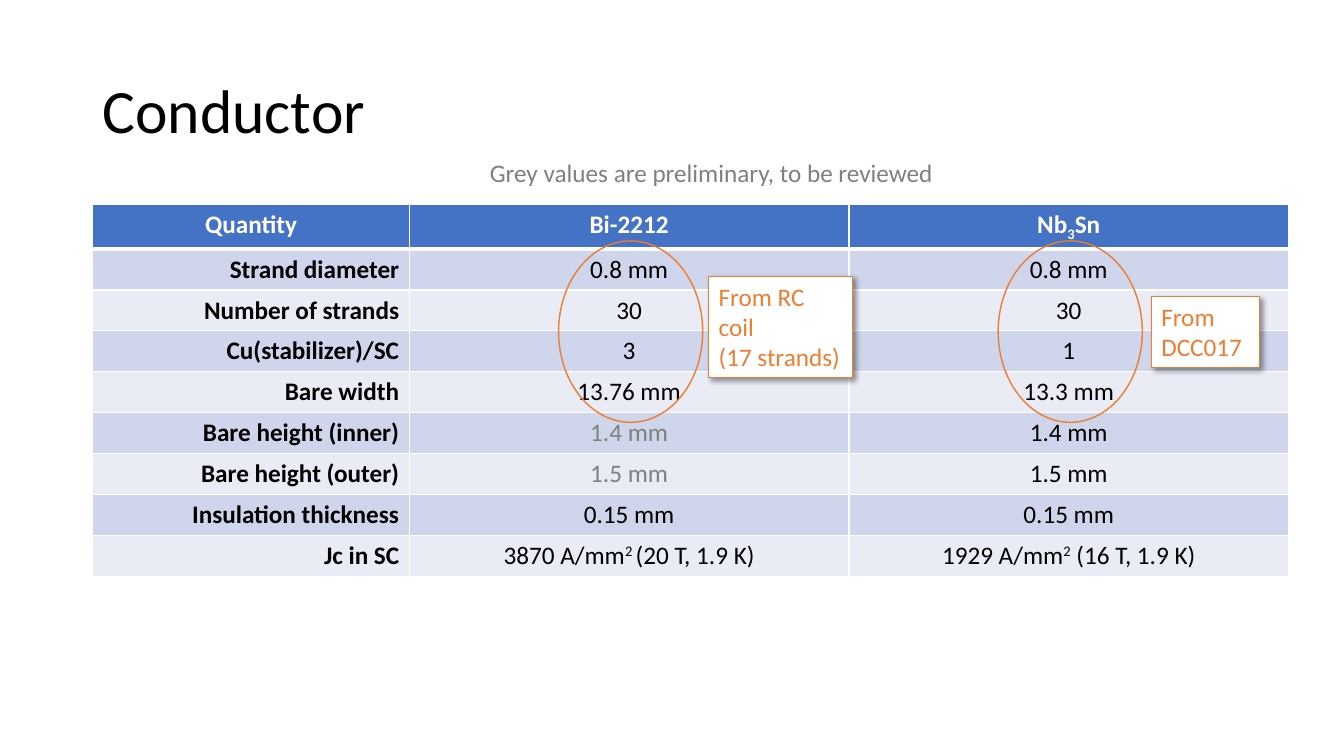
from lxml import etree
from pptx import Presentation
from pptx.dml.color import RGBColor
from pptx.enum.shapes import MSO_SHAPE
from pptx.enum.text import MSO_ANCHOR, PP_ALIGN
from pptx.oxml import parse_xml
from pptx.oxml.ns import qn
from pptx.util import Inches, Pt

LEFT, CENTER, RIGHT = PP_ALIGN.LEFT, PP_ALIGN.CENTER, PP_ALIGN.RIGHT
MIDDLE, TOP = MSO_ANCHOR.MIDDLE, MSO_ANCHOR.TOP
OVAL, RECT = MSO_SHAPE.OVAL, MSO_SHAPE.RECTANGLE
NS = "http://schemas.openxmlformats.org/drawingml/2006/main"
COLORS = {"black": "000000", "white": "FFFFFF", "grey": "808080", "orange": "ED7D31",
          "header": "4472C4", "odd": "CFD5EA", "even": "E9EBF5"}


def rgb(name):
    return RGBColor.from_string(COLORS[name])


def write(tf, runs, color, size=18, align=LEFT, bold=False):
    """Fill the first paragraph with (text, baseline shift) runs."""
    p = tf.paragraphs[0]
    p.alignment = align
    p.font.name, p.font.size, p.font.bold = "Calibri", Pt(size), bold
    p.font.color.rgb = rgb(color)
    for text, shift in runs:
        r = p.add_run()
        r.text = text
        if shift:
            r.font._element.set("baseline", str(shift * 1000))
    return p


prs = Presentation()
prs.slide_width, prs.slide_height = Inches(13.33), Inches(7.5)
s = prs.slides.add_slide(prs.slide_layouts[6])

# Title and remark
for text, box, size, color, anchor in [
    ("Conductor", (0.92, 0.4, 11.5, 1.45), 44, "black", MIDDLE),
    ("Grey values are preliminary, to be reviewed", (4.76, 1.51, 5.14, 0.4), 18, "grey", TOP),
]:
    tf = s.shapes.add_textbox(*map(Inches, box)).text_frame
    tf.word_wrap = True
    tf.vertical_anchor = anchor
    p = write(tf, [(text, 0)], color, size)
    if size == 44:
        p.line_spacing = 0.9

# Conductor table
rows = [
    ("Quantity", "Bi-2212", [("Nb", 0), ("3", -25), ("Sn", 0)]),
    ("Strand diameter", "0.8 mm", "0.8 mm"),
    ("Number of strands", "30", "30"),
    ("Cu(stabilizer)/SC", "3", "1"),
    ("Bare width", "13.76 mm", "13.3 mm"),
    ("Bare height (inner)", "1.4 mm", "1.4 mm"),
    ("Bare height (outer)", "1.5 mm", "1.5 mm"),
    ("Insulation thickness", "0.15 mm", "0.15 mm"),
    ("Jc in SC", [("3870 A/mm", 0), ("2 ", 30), ("(20 T, 1.9 K)", 0)],
     [("1929 A/mm", 0), ("2", 30), (" (16 T, 1.9 K)", 0)]),
]
preliminary = {(5, 1), (6, 1)}
col_widths = [3.14, 4.36, 4.36]
table = s.shapes.add_table(len(rows), 3, Inches(0.92), Inches(2.03),
                           Inches(sum(col_widths)), Inches(3.65)).table
for col, width in zip(table.columns, col_widths):
    col.width = Inches(width)
for i, row in enumerate(rows):
    for j, content in enumerate(row):
        cell = table.cell(i, j)
        # White borders, thicker between header and body
        tcPr = cell._tc.get_or_add_tcPr()
        for side in "LRTB":
            thick = (i, side) in {(0, "B"), (1, "T")}
            ln = etree.SubElement(tcPr, qn("a:ln" + side), w=str(Pt(3 if thick else 1)))
            fill = etree.SubElement(ln, qn("a:solidFill"))
            etree.SubElement(fill, qn("a:srgbClr"), val=COLORS["white"])
        cell.fill.solid()
        cell.fill.fore_color.rgb = rgb("header" if i == 0 else "odd" if i % 2 else "even")
        color = "white" if i == 0 else "grey" if (i, j) in preliminary else "black"
        runs = [(content, 0)] if isinstance(content, str) else content
        write(cell.text_frame, runs, color, align=RIGHT if i and j == 0 else CENTER,
              bold=i == 0 or j == 0)

# Ellipses around the first values, each with its source label
for oval_left, text, box in [
    (9.9, ["From DCC017"], (11.42, 2.94, 1.07, 0.71)),
    (5.54, ["From RC coil", "(17 strands)"], (7.03, 2.74, 1.43, 1.01)),
]:
    oval = s.shapes.add_shape(OVAL, Inches(oval_left), Inches(2.39), Inches(1.43), Inches(1.8))
    oval.shadow.inherit = False
    oval.fill.background()
    oval.line.color.rgb = rgb("orange")
    oval.line.width = Pt(1)

    label = s.shapes.add_shape(RECT, *map(Inches, box))
    label.fill.solid()
    label.fill.fore_color.rgb = rgb("white")
    label.line.color.rgb = rgb("orange")
    label.line.width = Pt(0.75)
    label._element.spPr.append(parse_xml(
        f'<a:effectLst xmlns:a="{NS}"><a:outerShdw blurRad="{Pt(4)}" dist="{Pt(3)}" '
        f'dir="{45 * 60000}" algn="tl" rotWithShape="0"><a:srgbClr val="{COLORS["black"]}">'
        '<a:alpha val="40000"/></a:srgbClr></a:outerShdw></a:effectLst>'))
    tf = label.text_frame
    tf.word_wrap = True
    tf.vertical_anchor = TOP
    p = write(tf, [(text[0], 0)], "orange")
    for line in text[1:]:
        p.add_line_break()
        p.add_run().text = line

prs.save("out.pptx")
